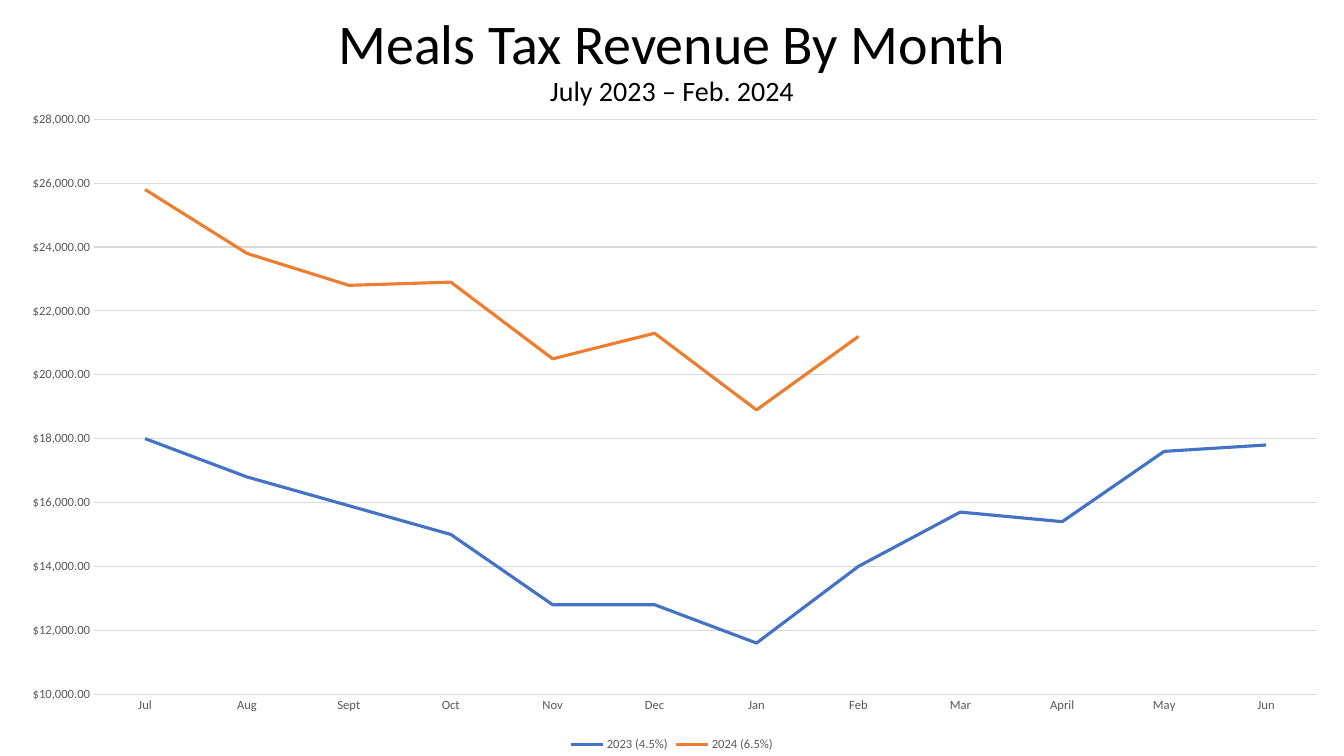
from lxml import etree
from pptx import Presentation
from pptx.chart.data import CategoryChartData
from pptx.dml.color import RGBColor
from pptx.enum.chart import XL_CHART_TYPE as ChartType
from pptx.enum.chart import XL_LEGEND_POSITION as LegendPosition
from pptx.enum.chart import XL_MARKER_STYLE as MarkerStyle
from pptx.enum.chart import XL_TICK_MARK as TickMark
from pptx.enum.text import MSO_ANCHOR, PP_ALIGN
from pptx.oxml.ns import qn
from pptx.util import Cm, Pt

BLACK = RGBColor(0x00, 0x00, 0x00)
LABEL_GREY = RGBColor(0x59, 0x59, 0x59)
GRID_GREY = RGBColor(0xD9, 0xD9, 0xD9)
BLUE = RGBColor(0x44, 0x72, 0xC4)
ORANGE = RGBColor(0xED, 0x7D, 0x31)
FONT = "Calibri"

MONTHS = ["Jul", "Aug", "Sept", "Oct", "Nov", "Dec",
          "Jan", "Feb", "Mar", "April", "May", "Jun"]
REVENUE = [
    ("2023 (4.5%)", BLUE, [18000, 16800, 15900, 15000, 12800, 12800,
                           11600, 14000, 15700, 15400, 17600, 17800]),
    ("2024 (6.5%)", ORANGE, [25800, 23800, 22800, 22900, 20500, 21300,
                             18900, 21200, None, None, None, None]),
]


def style_font(font, size, color):
    font.name = FONT
    font.size = Pt(size)
    font.color.rgb = color


def style_line(line, color, width):
    line.color.rgb = color
    line.width = Pt(width)


deck = Presentation()
deck.slide_width, deck.slide_height = Cm(33.87), Cm(19.05)
page = deck.slides.add_slide(deck.slide_layouts[6])

# Title
title_box = page.shapes.add_textbox(Cm(2.33), Cm(0), Cm(29.21), Cm(3.12))
title_frame = title_box.text_frame
title_frame.word_wrap = True
title_frame.vertical_anchor = MSO_ANCHOR.MIDDLE
para = title_frame.paragraphs[0]
para.alignment = PP_ALIGN.CENTER
para.line_spacing = 0.9
heading = para.add_run()
heading.text = "Meals Tax Revenue By Month"
style_font(heading.font, 40, BLACK)
para.add_line_break()
period = para.add_run()
period.text = "July 2023 – Feb. 2024"
style_font(period.font, 20, BLACK)

# Line chart
chart_data = CategoryChartData(number_format='"$"#,##0.00')
chart_data.categories = MONTHS
for name, color, values in REVENUE:
    chart_data.add_series(name, values)
chart = page.shapes.add_chart(ChartType.LINE, Cm(0), Cm(2.51), Cm(33.87),
                              Cm(16.54), chart_data).chart
chart.has_title = False
style_font(chart.font, 10, BLACK)
chart.plots[0].vary_by_categories = False

for series, (name, color, values) in zip(chart.plots[0].series, REVENUE):
    series.smooth = False
    series.marker.style = MarkerStyle.NONE
    style_line(series.format.line, color, 2.25)

# Axes and legend
month_axis, dollar_axis = chart.category_axis, chart.value_axis
for axis in (month_axis, dollar_axis):
    axis.major_tick_mark = axis.minor_tick_mark = TickMark.NONE
    style_font(axis.tick_labels.font, 9, LABEL_GREY)
style_line(month_axis.format.line, GRID_GREY, 0.75)
dollar_axis.format.line.fill.background()
dollar_axis.minimum_scale = 10000
dollar_axis.maximum_scale = 28000
dollar_axis.major_unit = 2000
dollar_axis.has_major_gridlines = True
style_line(dollar_axis.major_gridlines.format.line, GRID_GREY, 0.75)
dollar_axis.tick_labels.number_format = '"$"#,##0.00'
dollar_axis.tick_labels.number_format_is_linked = False

chart.has_legend = True
chart.legend.position = LegendPosition.BOTTOM
chart.legend.include_in_layout = False
style_font(chart.legend.font, 9, LABEL_GREY)

# Plot area as fractions of the chart
plot_area = chart.element.find(".//" + qn("c:plotArea"))
for old_layout in plot_area.findall(qn("c:layout")):
    plot_area.remove(old_layout)
layout = etree.Element(qn("c:layout"))
plot_area.insert(0, layout)
manual = etree.SubElement(layout, qn("c:manualLayout"))
for tag, value in [("layoutTarget", "inner"), ("xMode", "edge"),
                   ("yMode", "edge"), ("x", "0.07"), ("y", "0.03"),
                   ("w", "0.91"), ("h", "0.876")]:
    etree.SubElement(manual, qn("c:" + tag)).set("val", value)

deck.save("out.pptx")
